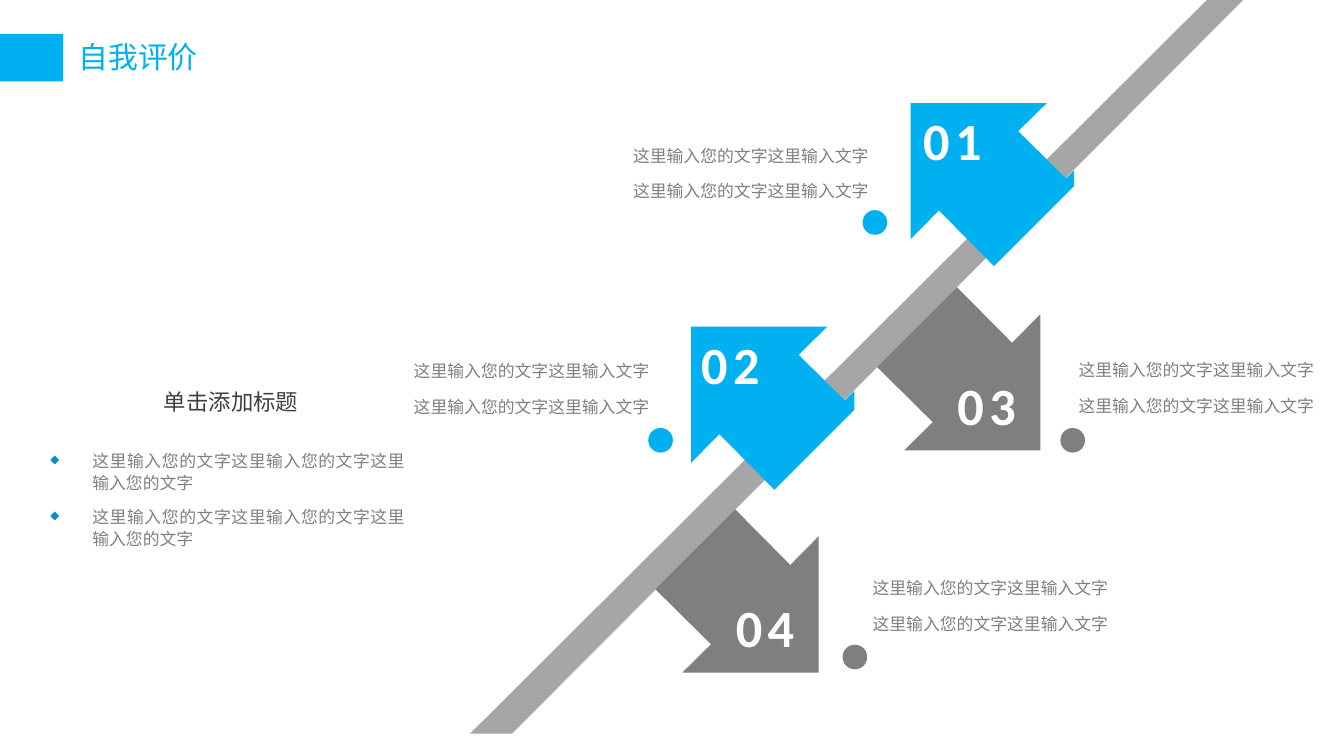
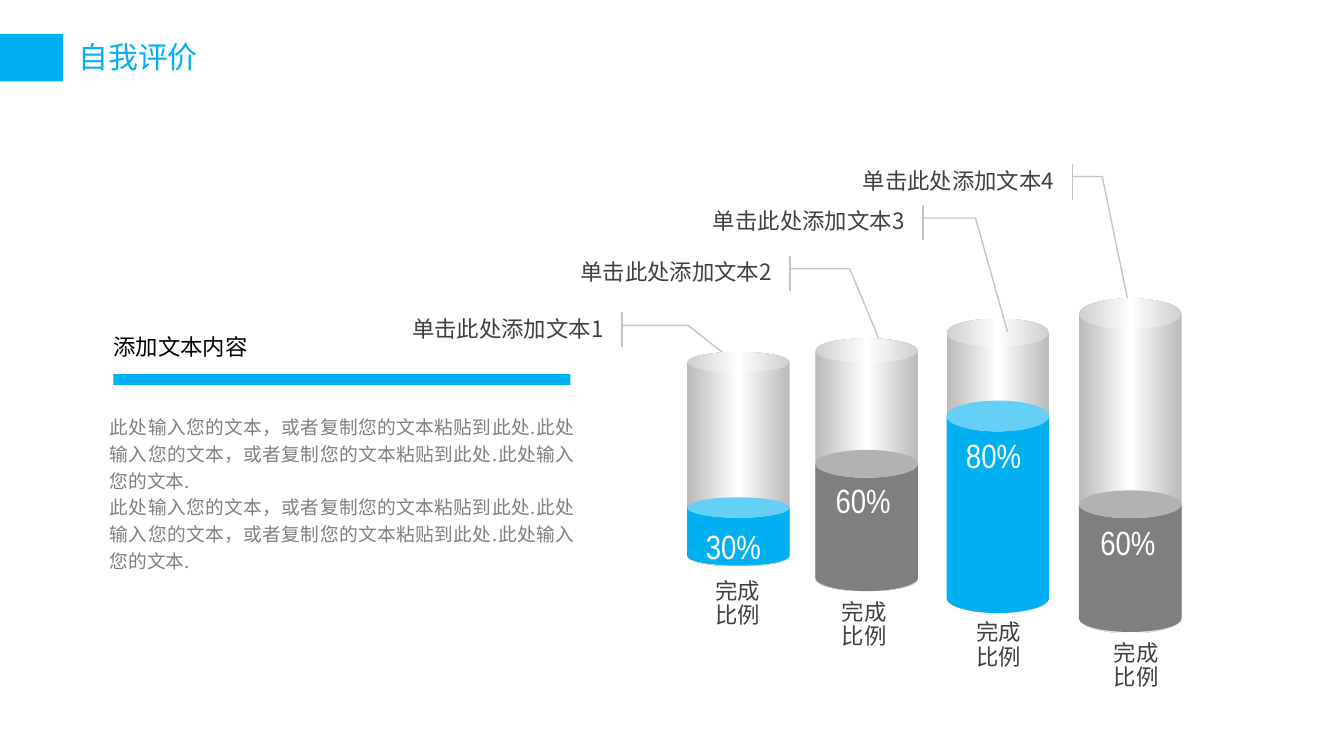
import lxml.etree
import pptx
import pptx.dml.color
import pptx.enum.shapes
import pptx.enum.text
import pptx.oxml.ns
import pptx.util

Pt = pptx.util.Pt
KIND = pptx.enum.shapes.MSO_SHAPE
ALIGN = pptx.enum.text.PP_ALIGN
ANCHOR = pptx.enum.text.MSO_ANCHOR
FIT = pptx.enum.text.MSO_AUTO_SIZE

HUES = {
    "blue": "00B0F0", "gray": "7F7F7F", "bar": "A6A6A6", "white": "FFFFFF",
    "body": "808080", "dark": "404040", "black": "000000",
    "bullet": "008FCA", "steel": "BABABA", "line": "C5C5C5",
}
SANS = "Noto Sans CJK SC"
TIGHT = (5, 2.7)
WIDE = (7.2, 3.6)
ROUND = 0.55  # control length of a quarter ellipse

# Arrow outline within a square, pointing to the lower right
SIDE = 87.4
ARROW = [(87.4, 44.6), (57.6, 15.1), (72.9, 0), (0, 0),
         (0, 72.9), (15.1, 57.6), (44.6, 87.4)]


def rgb(hue):
    return pptx.dml.color.RGBColor.from_string(HUES[hue])


def find(shape, tag):
    return shape._element.spPr.find(".//" + pptx.oxml.ns.qn(tag))


def node(parent, tag, **attrs):
    return lxml.etree.SubElement(parent, pptx.oxml.ns.qn(tag), attrs)


# Shapes
def paint(shape, hue, alpha=None):
    shape.shadow.inherit = False
    shape.line.fill.background()
    shape.fill.solid()
    shape.fill.fore_color.rgb = rgb(hue)
    if alpha is not None:
        node(find(shape, "a:srgbClr"), "a:alpha", val=str(alpha * 1000))
    return shape


def block(slide, kind, x, y, w, h, hue, alpha=None):
    shape = slide.shapes.add_shape(kind, Pt(x), Pt(y), Pt(w), Pt(h))
    return paint(shape, hue, alpha)


def outline(slide, points, hue):
    spots = [(Pt(x), Pt(y)) for x, y in points]
    maker = slide.shapes.build_freeform(*spots[0], scale=1.0)
    maker.add_line_segments(spots[1:], close=True)
    return paint(maker.convert_to_shape(), hue)


def curve(shape, turns):
    """Bend outline edges: "v" leaves upright, "h" leaves level."""
    track = find(shape, "a:pathLst")[0]
    steps = [step for step in track if len(step)]
    spots = [(int(step[0].get("x")), int(step[0].get("y"))) for step in steps]
    for i, turn in turns.items():
        (ax, ay), (bx, by) = spots[i - 1], spots[i]
        dx, dy = ROUND * (bx - ax), ROUND * (by - ay)
        if turn == "v":
            guides = [(ax, ay + dy), (bx - dx, by)]
        else:
            guides = [(ax + dx, ay), (bx, by - dy)]
        bend = node(track, "a:cubicBezTo")
        for x, y in guides + [(bx, by)]:
            node(bend, "a:pt", x=str(round(x)), y=str(round(y)))
        track.replace(steps[i], bend)


def shine(shape):
    """Fill with a gradient that is light in the middle."""
    shape.fill.gradient()
    shape.fill.gradient_angle = 0
    stops = find(shape, "a:gsLst")
    for old in list(stops):
        stops.remove(old)
    for place, hue in [(0, "steel"), (50, "white"), (100, "steel")]:
        stop = node(stops, "a:gs", pos=str(place * 1000))
        node(stop, "a:srgbClr", val=HUES[hue])


# Text
def write(shape, text, size=12, hue="dark", font=SANS, bold=False,
          align=ALIGN.LEFT, lead=None, after=None, inset=TIGHT, wrap=True,
          anchor=ANCHOR.TOP, grow=True, track=None, bullet=None):
    frame = shape.text_frame
    frame.word_wrap = wrap
    frame.auto_size = FIT.SHAPE_TO_FIT_TEXT if grow else FIT.NONE
    frame.vertical_anchor = anchor
    frame.margin_left = frame.margin_right = Pt(inset[0])
    frame.margin_top = frame.margin_bottom = Pt(inset[1])
    for i, part in enumerate(text.split("\n")):
        para = frame.add_paragraph() if i else frame.paragraphs[0]
        para.alignment = align
        if lead:
            para.line_spacing = lead
        if after:
            para.space_after = Pt(after)
        if bullet:
            mark(para, bullet)
        run = para.add_run()
        run.text = part
        run.font.size = Pt(size)
        run.font.bold = bold
        run.font.color.rgb = rgb(hue)
        run.font.name = font
        props = run._r.get_or_add_rPr()
        node(props, "a:ea", typeface=font)
        if track:
            props.set("spc", str(track * 100))


def mark(para, sign, indent=22.5):
    props = para._p.get_or_add_pPr()
    props.set("marL", str(Pt(indent)))
    props.set("indent", str(-Pt(indent)))
    node(node(props, "a:buClr"), "a:srgbClr", val=HUES["bullet"])
    node(props, "a:buSzPct", val="70000")
    node(props, "a:buChar", char=sign)


def label(slide, text, x, y, w, h, **style):
    box = slide.shapes.add_textbox(Pt(x), Pt(y), Pt(w), Pt(h))
    write(box, text, **style)


# Shared slide frame
def page(deck, text):
    slide = deck.slides.add_slide(deck.slide_layouts[5])
    title = slide.shapes.title
    title.left, title.top = Pt(36.3), Pt(18)
    title.width, title.height = Pt(144.7), Pt(25.2)
    write(title, text, size=16, hue="blue", inset=(5.8, 2.9))
    block(slide, KIND.RECTANGLE, 0, 18.2, 33.9, 25.4, "blue")
    return slide


# Numbered arrows
def arrow(slide, text, x, y, num, hue, fold=0):
    turn = hue == "gray"
    points = [(SIDE - a, SIDE - b) if turn else (a, b) for a, b in ARROW]
    if fold:
        right, base = x + SIDE, y + ARROW[0][1]
        outline(slide, [(right, base - fold), (right - fold, base),
                        (right, base)], hue)
    outline(slide, [(x + a, y + b) for a, b in points], hue)
    plate = block(slide, KIND.RECTANGLE, *num, 46.1, 39.6, hue)
    write(plate, text, size=28, hue="white", font="Calibri", bold=True,
          wrap=False, track=3)


def dot(slide, x, y, hue, size=13.2):
    block(slide, KIND.OVAL, x - size / 2, y - size / 2, size, size, hue)


def steps(deck):
    slide = page(deck, "自我评价")
    outline(slide, [(251.8, 393.1), (646.6, 0), (666, 0), (274.3, 393.1)],
            "bar")

    # Number, arrow corner, plate corner, dot centre, note box, colour, fold
    rows = [
        ("01", (487.9, 55.2), (489.6, 55.2), (468.7, 119.2),
         (318.2, 73, 151.9), "blue", 8.4),
        ("02", (370.3, 175), (370.7, 175.2), (353.9, 235.9),
         (193.5, 188.2, 159.1), "blue", 10.2),
        ("03", (469.9, 153.9), (507.9, 197.3), (574.7, 235.9),
         (572.8, 187.9, 137.5), "gray", 0),
        ("04", (351.1, 272.9), (389.2, 316.1), (458, 352),
         (462.5, 304.6, 146.9), "gray", 0),
    ]
    line = "这里输入您的文字这里输入文字"
    for num, spot, plate, center, note, hue, fold in rows:
        arrow(slide, num, *spot, plate, hue, fold)
        dot(slide, *center, hue)
        side = ALIGN.RIGHT if hue == "blue" else ALIGN.LEFT
        label(slide, f"{line}\n{line}", *note, 56.9, size=9, hue="body",
              align=side, lead=1.21, after=6)

    # Side list
    item = "这里输入您的文字这里输入您的文字这里输入您的文字"
    label(slide, f"{item}\n{item}", 19.9, 236.9, 203.8, 61.2, size=9,
          hue="body", align=ALIGN.JUSTIFY, lead=1.1, after=6, inset=WIDE,
          bullet="◆")
    label(slide, "单击添加标题", 82.1, 202.3, 83.5, 23, align=ALIGN.CENTER,
          lead=1.2, wrap=False)


# Tubes with a fill level
def tube(slide, x, y, h, lip, level, fill, bend, hue, w=55):
    half, right, mid = lip / 2, x + w, x + w / 2
    body = outline(slide, [
        (x, y + half), (x, y + h - half), (mid, y + h),
        (right, y + h - half), (right, y + half), (mid, y), (x, y + half),
    ], "steel")
    curve(body, {2: "v", 3: "h", 5: "v", 6: "h"})
    shine(body)
    block(slide, KIND.OVAL, x, y, w, lip, "white", 30)
    block(slide, KIND.OVAL, x, y + h - lip, w, lip, "white", 10)
    can = block(slide, KIND.CAN, x, level, w, fill, hue)
    can.adjustments[0] = bend


def callout(slide, text, x, y, w, h, bends):
    shape = block(slide, KIND.LINE_CALLOUT_2_ACCENT_BAR, x, y, w, h, "white")
    shape.fill.background()
    shape.line.color.rgb = rgb("line")
    shape.line.width = Pt(0.75)
    for i, bend in enumerate(bends):
        shape.adjustments[i] = bend
    write(shape, text, align=ALIGN.RIGHT, lead=0.9, anchor=ANCHOR.MIDDLE,
          grow=False)


def levels(deck):
    slide = page(deck, "自我评价")
    # Tube, share and its corner, caption left, callout box and bends
    rows = [
        ((368.1, 188.6, 114.8, 11, 266.4, 36.7, 0.3, "blue"),
         "30%", (370.5, 279), 367.5, (210.4, 167.4, 118.1, 18.7),
         (0.37, 1.04, 0.37, 1.34, 1.36, 1.54)),
        ((436.8, 181.3, 135.4, 13, 241.1, 75.6, 0.27, "gray"),
         "60%", (440, 254.6), 435.2, (300.5, 137, 118.1, 18.7),
         (0.37, 1.04, 0.37, 1.31, 2.64, 1.46)),
        ((507.1, 170.7, 157.6, 15.1, 214.6, 113.8, 0.3, "blue"),
         "80%", (509.9, 230.4), 507.2, (367.2, 109.9, 122.4, 18.7),
         (0.37, 1.04, 0.37, 1.27, 3.63, 1.41)),
        ((578, 159.9, 179.3, 16.5, 262.8, 75.8, 0.27, "gray"),
         "60%", (581.9, 276.7), 581, (448.1, 87.8, 121.7, 19.4),
         (0.35, 1.04, 0.35, 1.17, 3.99, 1.29)),
    ]
    for i, (shape, share, spot, left, box, bends) in enumerate(rows):
        note = f"单击此处添加文本{i + 1}"
        front = i == 2  # this leader ends on top of its tube
        if not front:
            callout(slide, note, *box, bends)
        tube(slide, *shape)
        if front:
            callout(slide, note, *box, bends)
        label(slide, share, *spot, 44.8, 27.4, size=18, hue="white",
              font="Arial Narrow", align=ALIGN.CENTER)
        label(slide, "完成\n比例", left, 308.1 + 11.1 * i, 55.4, 31.7,
              align=ALIGN.CENTER, lead=0.9)

    # Text column
    half = "此处输入您的文本，或者复制您的文本粘贴到此处."
    para = half * 2 + "此处输入您的文本."
    label(slide, f"{para}\n{para}", 53.9, 217.6, 258.5, 92.9, size=10,
          hue="body", align=ALIGN.JUSTIFY, lead=1.2)
    label(slide, "添加文本内容", 53.7, 175, 176.4, 21.6, hue="black",
          inset=WIDE)
    block(slide, KIND.RECTANGLE, 60.8, 200.4, 244.8, 6, "blue")


def main():
    deck = pptx.Presentation()
    deck.slide_width, deck.slide_height = Pt(720), Pt(405)
    steps(deck)
    levels(deck)
    deck.save("out.pptx")


if __name__ == "__main__":
    main()
